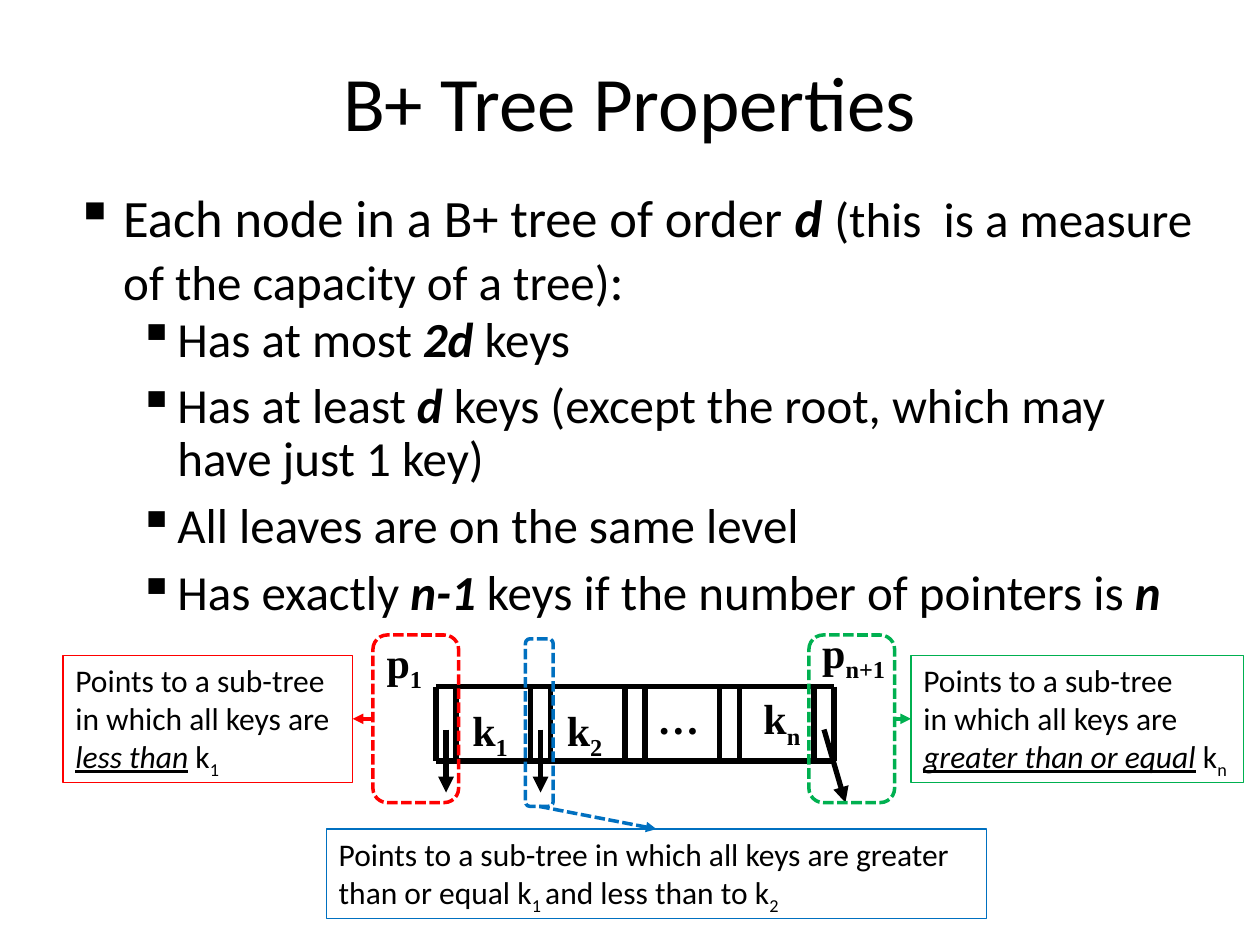
import pptx
import pptx.dml.color
import pptx.enum.dml
import pptx.enum.shapes
import pptx.enum.text
import pptx.oxml.ns
import pptx.util
from lxml import etree

BLACK = pptx.dml.color.RGBColor(0x00, 0x00, 0x00)
RED = pptx.dml.color.RGBColor(0xFF, 0x00, 0x00)
GREEN = pptx.dml.color.RGBColor(0x00, 0xB0, 0x50)
BLUE = pptx.dml.color.RGBColor(0x00, 0x70, 0xC0)
CENTER = pptx.enum.text.PP_ALIGN.CENTER
LEFT = pptx.enum.text.PP_ALIGN.LEFT
DASH = pptx.enum.dml.MSO_LINE.SQUARE_DOT
STRAIGHT = pptx.enum.shapes.MSO_CONNECTOR.STRAIGHT

PLAIN = {}
STRONG = {"bold": True, "italic": True}
STRESS = {"italic": True, "underline": True}
SUB = {"baseline": "-25000"}

presentation = pptx.Presentation()
presentation.slide_width = pptx.util.Inches(10)
presentation.slide_height = pptx.util.Inches(7.5)
slide = presentation.slides.add_slide(presentation.slide_layouts[6])

# Square grid: 100 columns by 75 rows
CELL = presentation.slide_width / 100


def add_text(shapes, box, paragraphs, size, font="Calibri", align=LEFT, bold=False, wrap=True, grow=True):
    """Add a text box at box (grid cells); each paragraph is a list of (text, format) runs."""
    shape = shapes.add_textbox(*(round(value * CELL) for value in box))
    frame = shape.text_frame
    frame.word_wrap = wrap
    if grow:
        frame.auto_size = pptx.enum.text.MSO_AUTO_SIZE.SHAPE_TO_FIT_TEXT
    for index, runs in enumerate(paragraphs):
        paragraph = frame.add_paragraph() if index else frame.paragraphs[0]
        paragraph.alignment = align
        for text, style in runs:
            if text == "\n":
                paragraph.add_line_break()
                continue
            run = paragraph.add_run()
            run.text = text
            run.font.color.rgb = BLACK
            values = {"name": font, "size": pptx.util.Pt(size), "bold": bold} | style
            baseline = values.pop("baseline", None)
            for name, value in values.items():
                setattr(run.font, name, value)
            if baseline:
                run.font._element.set("baseline", baseline)
    return shape


def add_line(shapes, start, end, color=BLACK, width=3, arrow=False, dash=None):
    """Add a straight line between two grid points."""
    line = shapes.add_connector(STRAIGHT, *(round(value * CELL) for value in (*start, *end)))
    line.line.color.rgb = color
    line.line.width = pptx.util.Pt(width)
    if dash:
        line.line.dash_style = dash
    if arrow:
        tail = etree.SubElement(line.line._get_or_add_ln(), pptx.oxml.ns.qn("a:tailEnd"))
        tail.set("type", "triangle")
    etree.SubElement(line._element.spPr, pptx.oxml.ns.qn("a:effectLst"))
    return line


# Title
title = add_text(slide.shapes, (5, 1.7, 90, 12.5), [[("B+ Tree Properties", PLAIN)]], 44,
                 align=CENTER, grow=False)
title.text_frame.vertical_anchor = pptx.enum.text.MSO_ANCHOR.MIDDLE

# Bulleted properties
LARGE = {"size": pptx.util.Pt(30)}
properties = [
    [("Each node in a B+ tree of order ", LARGE), ("d ", STRONG | LARGE),
     ("(this  is a measure of the capacity of a tree)", PLAIN), (":", LARGE)],
    [("Has at most ", PLAIN), ("2d ", STRONG), ("keys", PLAIN)],
    [("Has at least ", PLAIN), ("d ", STRONG),
     ("keys (except the root, which may have just 1 key)", PLAIN)],
    [("All leaves are on the same level", PLAIN)],
    [("Has exactly ", PLAIN), ("n-1", STRONG),
     (" keys if the number of pointers is ", PLAIN), ("n", STRONG)],
]
body = add_text(slide.shapes, (5, 14.2, 91.7, 49.5), properties, 28, grow=False)
for index, paragraph in enumerate(body.text_frame.paragraphs):
    margin, hanging = (8.1, 3.1) if index else (3.8, 3.8)
    if index:
        paragraph.level = 1
        paragraph.line_spacing = 0.9
        paragraph.space_before = pptx.util.Pt(2 if index == 1 else 8)
    paragraph_format = paragraph._p.get_or_add_pPr()
    paragraph_format.set("marL", str(round(margin * CELL)))
    paragraph_format.set("indent", str(round(-hanging * CELL)))
    etree.SubElement(paragraph_format, pptx.oxml.ns.qn("a:buChar")).set("char", "▪")

# Tree node: five narrow pointer slots with four keys between them
NODE_LEFT, NODE_TOP, NODE_BOTTOM = 34.6, 54.5, 60.4
PITCH, SLOT = 7.5, 1.6
ARROW_TOP = 57.9
node = slide.shapes.add_group_shape().shapes
for index in range(5):
    for x in (NODE_LEFT + index * PITCH, NODE_LEFT + index * PITCH + SLOT):
        add_line(node, (x, NODE_TOP), (x, NODE_BOTTOM))
for y in (NODE_TOP, NODE_BOTTOM):
    for first in (0, 2):
        x = NODE_LEFT + first * PITCH
        add_line(node, (x, y), (x + 2 * PITCH + SLOT, y))

# Pointer arrows: slot index, sideways shift, tip row
for index, shift, tip in ((0, 0, 62.9), (1, 0, 62.9), (4, 1.7, 63.7)):
    x = NODE_LEFT + index * PITCH + SLOT / 2
    add_line(node, (x, ARROW_TOP), (x + shift, tip), arrow=True)

# Key and pointer labels
for box, letter, subscript in (
    ((36.4, 55.4, 5, 5.1), "k", "1"),
    ((43.9, 55.4, 5, 5.1), "k", "2"),
    ((51.2, 54.5, 5.3, 5), "…", ""),
    ((59.5, 54.5, 5.1, 5.1), "k", "n"),
    ((29.6, 50, 5, 5.1), "p", "1"),
    ((63.9, 49.2, 7.7, 5.1), "p", "n+1"),
):
    runs = [(letter, PLAIN)] + ([(subscript, SUB)] if subscript else [])
    add_text(node, box, [runs], 24, "Times New Roman", CENTER, bold=True, wrap=False)

# Callouts: dashed frame, explanation, and the sides that the arrow joins
subtree = [("Points to a sub-tree ", PLAIN), ("\n", PLAIN), ("in which all keys are", PLAIN)]
callouts = [
    (RED, (29.6, 50.4, 6.8, 13.3), (5, 52, 23, 10.1), 1, 3, None,
     [subtree, [("less than", STRESS), (" k", PLAIN), ("1", SUB)]]),
    (GREEN, (64.2, 50.4, 6.8, 13.3), (72.3, 52, 26.4, 10.1), 3, 1, None,
     [subtree, [("greater than or equal", STRESS), (" k", PLAIN), ("n", SUB)]]),
    (BLUE, (41.7, 50.7, 2.2, 13.3), (25.9, 65.8, 52.4, 7.1), 2, 0, DASH,
     [[("Points to a sub-tree in which all keys are greater than or equal k", PLAIN),
       ("1 ", SUB), ("and less than to k", PLAIN), ("2", SUB)]]),
]
for color, frame_box, text_box, frame_side, text_side, dash, paragraphs in callouts:
    frame = slide.shapes.add_shape(pptx.enum.shapes.MSO_SHAPE.ROUNDED_RECTANGLE,
                                   *(round(value * CELL) for value in frame_box))
    frame.shadow.inherit = False
    frame.fill.background()
    frame.line.color.rgb = color
    frame.line.width = pptx.util.Pt(2)
    frame.line.dash_style = DASH
    note = add_text(slide.shapes, text_box, paragraphs, 18, wrap=dash is not None)
    note.line.color.rgb = color
    note.line.width = pptx.util.Pt(0.75)
    arrow = add_line(slide.shapes, (0, 0), (0, 0), color, 2, arrow=True, dash=dash)
    arrow.begin_connect(frame, frame_side)
    arrow.end_connect(note, text_side)

presentation.save("out.pptx")
